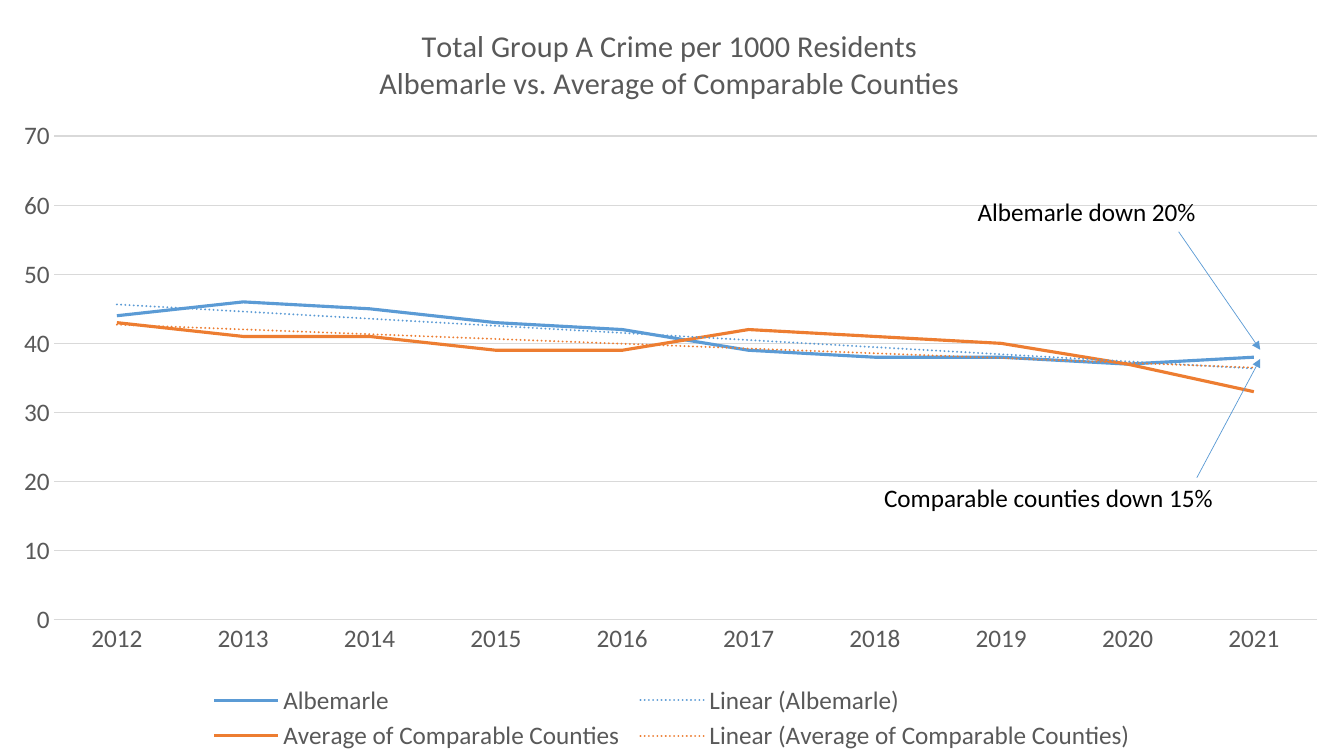
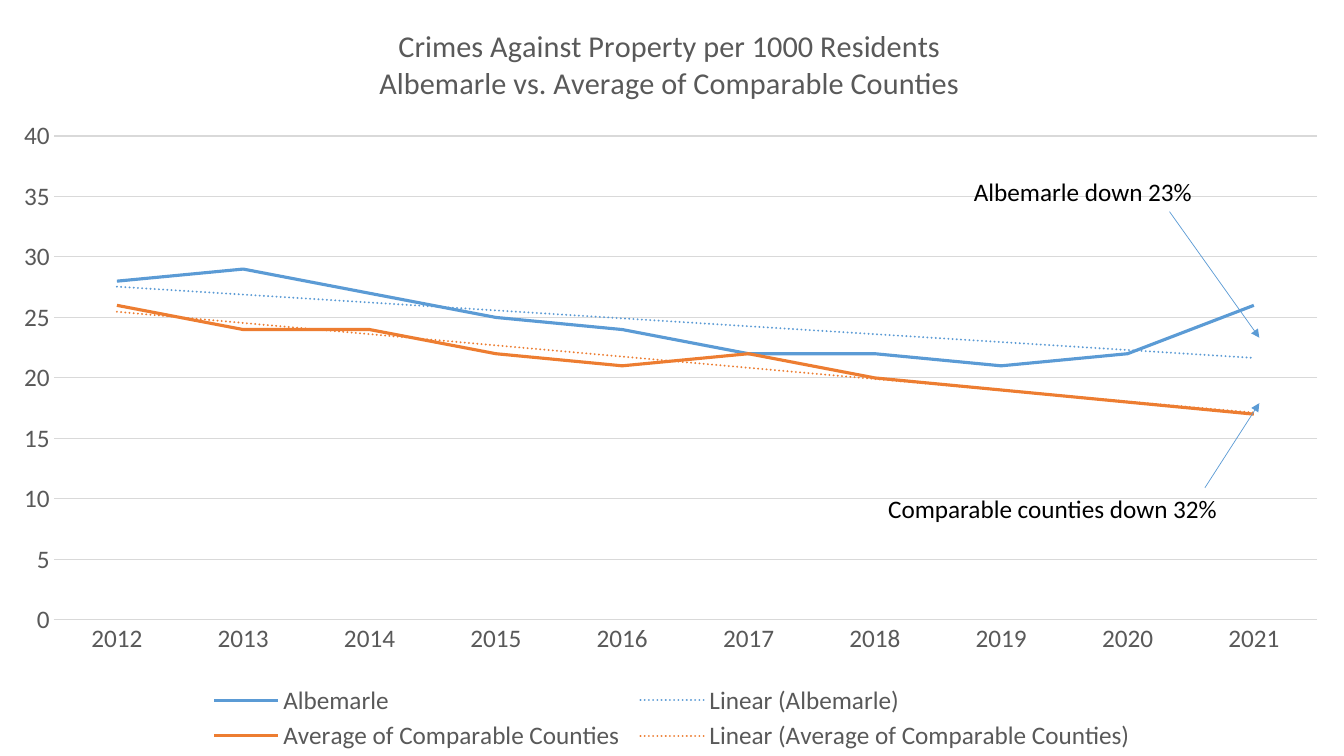
from lxml import etree
from pptx import Presentation
from pptx.chart.data import CategoryChartData
from pptx.dml.color import RGBColor
from pptx.enum.chart import XL_CHART_TYPE, XL_LEGEND_POSITION, XL_TICK_MARK
from pptx.enum.shapes import MSO_CONNECTOR
from pptx.enum.text import MSO_AUTO_SIZE, PP_ALIGN
from pptx.oxml import parse_xml
from pptx.oxml.ns import nsdecls, qn
from pptx.util import Inches, Pt

WIDTH, HEIGHT = Inches(13.33), Inches(7.5)
COLUMN, ROW = WIDTH / 100, HEIGHT / 100
FULL_PAGE = (0, 0, 100, 100)
FONT = "Calibri"
BLUE, ORANGE, GRAY, GRID, BLACK = "5B9BD5", "ED7D31", "595959", "D9D9D9", "000000"
BODY_SIZE, TITLE_SIZE = 18, 21.6
YEARS = [str(year) for year in range(2012, 2022)]
SERIES = [("Albemarle", BLUE), ("Average of Comparable Counties", ORANGE)]
SUBTITLE = "Albemarle vs. Average of Comparable Counties"

PAGES = [
    {
        "title": "Total Group A Crime per 1000 Residents",
        "top": 70,
        "step": 10,
        "values": [
            [44, 46, 45, 43, 42, 39, 38, 38, 37, 38],
            [43, 41, 41, 39, 39, 42, 41, 40, 37, 33],
        ],
        "callouts": [
            ("Albemarle down 20%", (72, 25.33, 17.93, 5.33), 87.7, (93.77, 46.27)),
            ("Comparable counties down 15%", (65.04, 63.2, 26.26, 5.33), 89.05, (93.77, 47.47)),
        ],
    },
    {
        "title": "Crimes Against Property per 1000 Residents",
        "top": 40,
        "step": 5,
        "values": [
            [28, 29, 27, 25, 24, 22, 22, 21, 22, 26],
            [26, 24, 24, 22, 21, 22, 20, 19, 18, 17],
        ],
        "callouts": [
            ("Albemarle down 23%", (71.72, 22.67, 17.93, 5.33), 87.02, (93.7, 44.67)),
            ("Comparable counties down 32%", (65.34, 64.53, 26.26, 5.33), 89.65, (93.7, 53.33)),
        ],
    },
]


def color(value):
    """Turn a hex string into a colour."""
    return RGBColor.from_string(value)


def place(left, top, width, height):
    """Turn grid columns and rows into slide lengths."""
    return int(left * COLUMN), int(top * ROW), int(width * COLUMN), int(height * ROW)


def style_font(font, size=BODY_SIZE, fill=GRAY):
    """Apply the shared typeface with a size and colour."""
    font.name, font.size, font.bold = FONT, Pt(size), False
    font.color.rgb = color(fill)


def style_line(line, fill, width):
    """Give a line its colour and width."""
    line.color.rgb = color(fill)
    line.width = Pt(width)


def write_text(frame, text, size=BODY_SIZE, fill=BLACK, align=None):
    """Write one paragraph for each line of text."""
    for index, words in enumerate(text.split("\n")):
        para = frame.add_paragraph() if index else frame.paragraphs[0]
        para.alignment = align
        span = para.add_run()
        span.text = words
        style_font(span.font, size, fill)


def set_layout(element, inner=False, **shares):
    """Position a chart part by shares of the chart's size."""
    for old in element.findall(qn("c:layout")):
        element.remove(old)
    target = '<c:layoutTarget val="inner"/>' if inner else ""
    modes = "".join(f'<c:{key}Mode val="edge"/>' for key in "xy")
    sizes = "".join(f'<c:{key} val="{share}"/>' for key, share in shares.items())
    layout = parse_xml(
        f'<c:layout {nsdecls("c")}><c:manualLayout>{target}{modes}{sizes}'
        "</c:manualLayout></c:layout>"
    )
    overlay = element.find(qn("c:overlay"))
    if overlay is None:
        element.insert(0, layout)
    else:
        overlay.addprevious(layout)


def add_trend(series, fill):
    """Add a dotted linear trend line to a series."""
    trend = parse_xml(
        f'<c:trendline {nsdecls("c", "a")}><c:spPr><a:ln w="{Pt(1.5)}" cap="rnd">'
        f'<a:solidFill><a:srgbClr val="{fill}"/></a:solidFill><a:prstDash val="sysDot"/>'
        '</a:ln></c:spPr><c:trendlineType val="linear"/><c:dispRSqr val="0"/>'
        '<c:dispEq val="0"/></c:trendline>'
    )
    series._element.find(qn("c:cat")).addprevious(trend)


def style_axes(chart, top, step):
    """Format both axes and the horizontal grid."""
    for axis in (chart.category_axis, chart.value_axis):
        axis.major_tick_mark = axis.minor_tick_mark = XL_TICK_MARK.NONE
        style_font(axis.tick_labels.font)
    style_line(chart.category_axis.format.line, GRID, 0.75)
    scale = chart.value_axis
    scale.minimum_scale, scale.maximum_scale, scale.major_unit = 0, top, step
    scale.tick_labels.number_format = "#,##0"
    scale.tick_labels.number_format_is_linked = False
    scale.format.line.fill.background()
    style_line(scale.major_gridlines.format.line, GRID, 0.75)


def add_trend_chart(page, box, title, top, step, values):
    """Draw the titled line chart with trend lines and legend."""
    data = CategoryChartData(number_format="#,##0")
    data.categories = YEARS
    for (name, _), numbers in zip(SERIES, values):
        data.add_series(name, numbers)
    chart = page.shapes.add_chart(XL_CHART_TYPE.LINE, *place(*box), data).chart
    style_font(chart.font, fill=BLACK)
    chart.has_title = True
    write_text(chart.chart_title.text_frame, f"{title}\n{SUBTITLE}",
               size=TITLE_SIZE, fill=GRAY, align=PP_ALIGN.CENTER)
    set_layout(chart.chart_title._element, x=0.28, y=0.03)
    style_axes(chart, top, step)
    for series, (_, fill) in zip(chart.plots[0].series, SERIES):
        series.smooth = False
        style_line(series.format.line, fill, 2.25)
        add_trend(series, fill)
    chart.plots[0].vary_by_categories = False
    chart.has_legend = True
    chart.legend.position = XL_LEGEND_POSITION.BOTTOM
    chart.legend.include_in_layout = False
    style_font(chart.legend.font)
    set_layout(chart.legend._element, x=0.15, y=0.9, w=0.7, h=0.1)
    plot_area = chart._chartSpace.chart.plotArea
    set_layout(plot_area, inner=True, x=0.04, y=0.18, w=0.94, h=0.64)


def add_arrow(page, start, tip):
    """Draw a thin arrow between two grid points."""
    arrow = page.shapes.add_connector(
        MSO_CONNECTOR.STRAIGHT, *place(*start, *tip))
    style_line(arrow.line, BLUE, 0.5)
    etree.SubElement(arrow.line._get_or_add_ln(), qn("a:tailEnd"), type="triangle")
    etree.SubElement(arrow._element.spPr, qn("a:effectLst"))


def add_callout(page, text, box, start, tip):
    """Write a label and point from its nearer edge to the tip."""
    label = page.shapes.add_textbox(*place(*box))
    label.text_frame.word_wrap = False
    label.text_frame.auto_size = MSO_AUTO_SIZE.SHAPE_TO_FIT_TEXT
    write_text(label.text_frame, text)
    _, top, _, height = box
    edge = top + height if tip[1] > top else top
    add_arrow(page, (start, edge), tip)


def add_trend_page(deck, title, top, step, values, callouts):
    """Build one page with a chart and its callouts."""
    page = deck.slides.add_slide(deck.slide_layouts[6])
    add_trend_chart(page, FULL_PAGE, title, top, step, values)
    for callout in callouts:
        add_callout(page, *callout)


def main():
    """Build and save the deck."""
    deck = Presentation()
    deck.slide_width, deck.slide_height = WIDTH, HEIGHT
    for content in PAGES:
        add_trend_page(deck, **content)
    deck.save("out.pptx")


if __name__ == "__main__":
    main()
